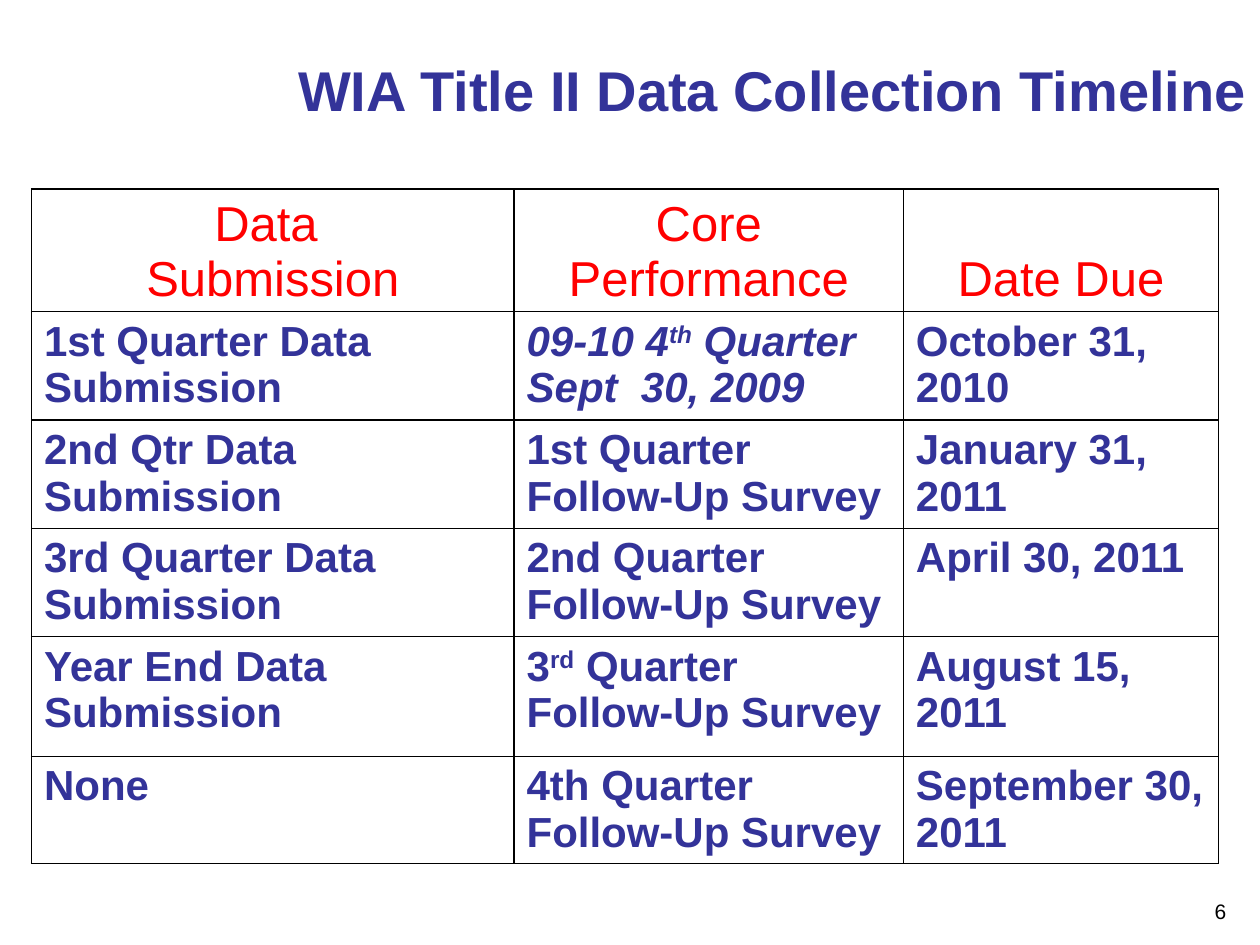
from lxml.etree import SubElement
from pptx import Presentation
from pptx.dml.color import RGBColor
from pptx.enum.text import MSO_ANCHOR as Anchor, PP_ALIGN as Align
from pptx.oxml.ns import qn
from pptx.util import Inches, Pt

BLUE, RED, BLACK = "333399", "FF0000", "000000"
COLUMN_WIDTHS = [3.83, 3.09, 2.5]
ROW_HEIGHTS = [0.97, 0.86, 0.86, 0.86, 0.95, 0.85]
HEADERS = ["Data \nSubmission", "Core Performance", "Date Due"]
TIMELINE = [
    ["1st Quarter Data Submission", "09-10 4^th^ Quarter\nSept  30, 2009", "October 31, 2010"],
    ["2nd Qtr Data Submission", "1st Quarter Follow-Up Survey", "January 31, 2011"],
    ["3rd Quarter Data Submission", "2nd Quarter Follow-Up Survey", "April 30, 2011"],
    ["Year End Data Submission", "3^rd^ Quarter Follow-Up Survey", "August 15, 2011"],
    ["None", "4th Quarter Follow-Up Survey", "September 30, 2011"],
]


def rgb(color):
    return RGBColor.from_string(color)


def write(frame, text, size, color, bold=False, italic=False, align=Align.LEFT):
    frame.word_wrap = True
    for index, line in enumerate(text.split("\n")):
        paragraph = frame.add_paragraph() if index else frame.paragraphs[0]
        paragraph.alignment = align
        for position, part in enumerate(line.split("^")):
            run = paragraph.add_run()
            run.text = part
            font = run.font
            font.name, font.size = "Arial", Pt(size)
            font.bold, font.italic = bold, italic
            font.color.rgb = rgb(color)
            if position % 2:
                run._r.get_or_add_rPr().set("baseline", "30000")


def add_borders(cell, color, width):
    properties = cell._tc.get_or_add_tcPr()
    for index, side in enumerate(("lnL", "lnR", "lnT", "lnB")):
        line = properties.makeelement(qn(f"a:{side}"), {"w": str(Pt(width))})
        fill = SubElement(line, qn("a:solidFill"))
        SubElement(fill, qn("a:srgbClr"), val=color)
        properties.insert(index, line)


def add_title(slide, presentation, text):
    title = slide.shapes.title
    width, height = presentation.slide_width, presentation.slide_height
    title.left, title.top = int(width * 0.15), int(height / 30)
    title.width, title.height = int(width * 0.85), Inches(0.92)
    title.text_frame.vertical_anchor = Anchor.MIDDLE
    write(title.text_frame, text, 32, BLUE, bold=True, align=Align.RIGHT)


def add_timeline(slide):
    rows = [HEADERS] + TIMELINE
    table = slide.shapes.add_table(
        len(rows), len(HEADERS), Inches(0.25), Inches(1.5),
        Inches(sum(COLUMN_WIDTHS)), Inches(sum(ROW_HEIGHTS))).table
    table.first_row = table.horz_banding = False
    for column, width in zip(table.columns, COLUMN_WIDTHS):
        column.width = Inches(width)
    for row, height in zip(table.rows, ROW_HEIGHTS):
        row.height = Inches(height)
    for row_index, texts in enumerate(rows):
        for column_index, text in enumerate(texts):
            cell = table.cell(row_index, column_index)
            cell.fill.background()
            add_borders(cell, BLACK, 1)
            if row_index == 0:
                cell.vertical_anchor = Anchor.BOTTOM
                cell.margin_top, cell.margin_bottom = 0, Inches(0.04)
                write(cell.text_frame, text, 28, RED, align=Align.CENTER)
            else:
                cell.margin_bottom = 0
                write(cell.text_frame, text, 24, BLUE, bold=True,
                      italic=(row_index, column_index) == (1, 1))


def add_page_number(slide, number):
    box = slide.shapes.add_textbox(Inches(7.5), Inches(7.08), Inches(2.33), Inches(0.27))
    write(box.text_frame, number, 12, BLACK, align=Align.RIGHT)


def main():
    presentation = Presentation()
    presentation.slide_width, presentation.slide_height = Inches(10), Inches(7.5)
    slide = presentation.slides.add_slide(presentation.slide_layouts[5])
    add_page_number(slide, "6")
    add_timeline(slide)
    add_title(slide, presentation, "WIA Title II Data Collection Timeline")
    presentation.save("out.pptx")


if __name__ == "__main__":
    main()
